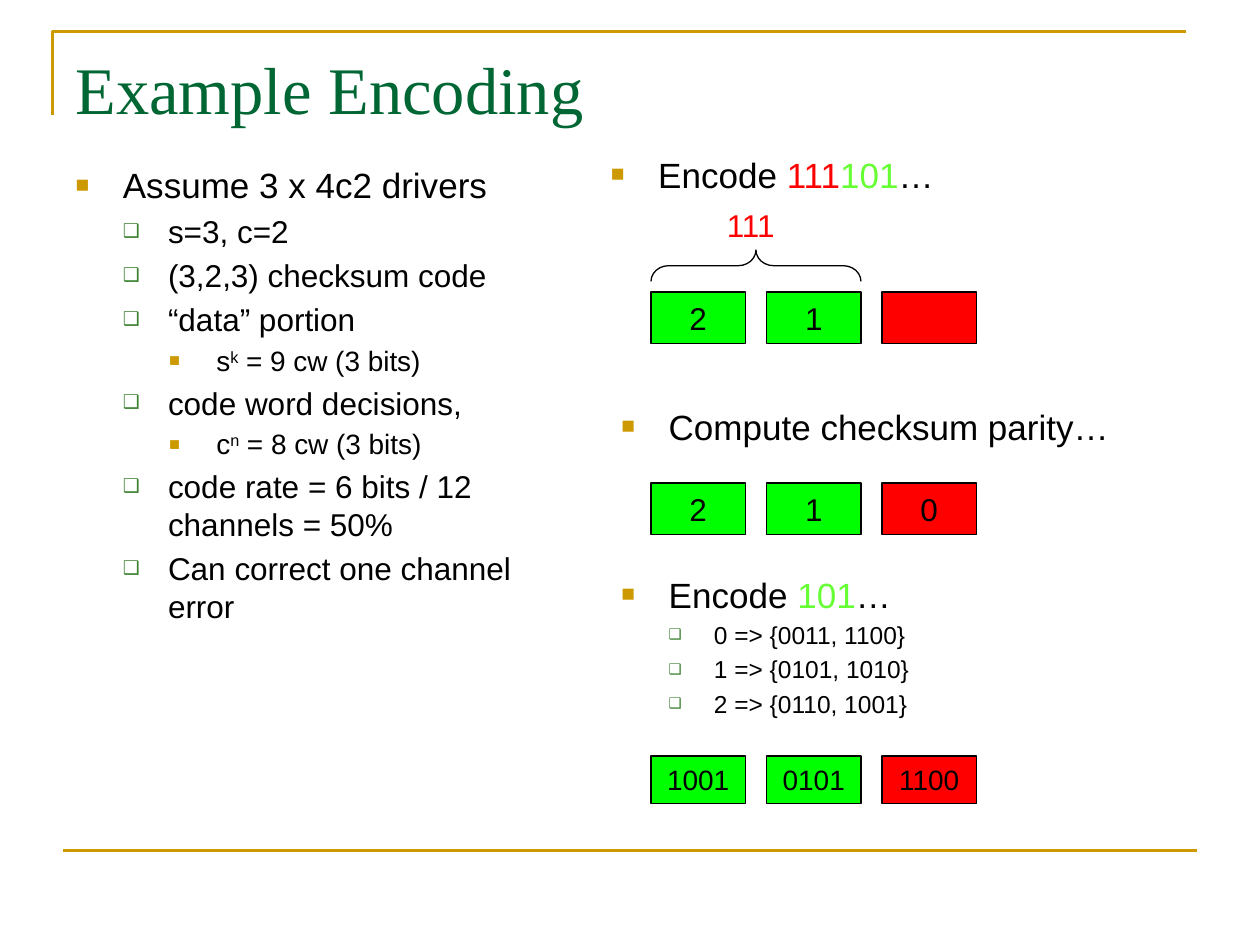
from lxml import etree
from pptx import Presentation
from pptx import util as u
from pptx.dml.color import RGBColor
from pptx.enum import shapes, text
from pptx.oxml import ns

PX = 7620  # 120 px to the inch
GOLD = RGBColor(0xCC, 0x99, 0x00)
DARK_GREEN = RGBColor(0x00, 0x66, 0x33)
BULLET_GREEN = RGBColor(0x3B, 0x81, 0x2F)
BLACK = RGBColor(0x00, 0x00, 0x00)
RED = RGBColor(0xFF, 0x00, 0x00)
GREEN = RGBColor(0x00, 0xFF, 0x00)
LIME = RGBColor(0x66, 0xFF, 0x33)

# Left margin, hanging indent (px), bullet, its colour and size for each level
SQUARE, BOX = "■", "❑"
LEVELS = [
    (45, 45, SQUARE, GOLD, 65),
    (88, 43, BOX, BULLET_GREEN, 60),
    (134, 45, SQUARE, GOLD, 65),
]
FRAME = {"word_wrap": True, "auto_size": text.MSO_AUTO_SIZE.NONE}


def write(paragraph, runs, size, font="Arial"):
    """Add (text, colour, baseline percent) runs to a paragraph."""
    for words, color, baseline in runs:
        run = paragraph.add_run()
        run.text = words
        for name, value in {"name": font, "size": u.Pt(size), "bold": False}.items():
            setattr(run.font, name, value)
        run.font.color.rgb = color
        if baseline:
            run._r.get_or_add_rPr().set("baseline", str(baseline * 1000))


def write_list(frame, items):
    """Fill a frame with bulleted (level, size, runs) items."""
    for name, value in FRAME.items():
        setattr(frame, name, value)
    frame.vertical_anchor = text.MSO_ANCHOR.TOP
    for index, (level, size, runs) in enumerate(items):
        paragraph = frame.add_paragraph() if index else frame.paragraphs[0]
        paragraph.level = level
        paragraph.space_before = u.Pt(size * 0.2)
        margin, hanging, bullet, color, percent = LEVELS[level]
        properties = paragraph._p.get_or_add_pPr()
        properties.set("marL", str(margin * PX))
        properties.set("indent", str(-hanging * PX))
        bullet_color = etree.SubElement(properties, ns.qn("a:buClr"))
        etree.SubElement(bullet_color, ns.qn("a:srgbClr"), val=str(color))
        etree.SubElement(properties, ns.qn("a:buSzPct"), val=str(percent * 1000))
        etree.SubElement(properties, ns.qn("a:buFont"), typeface="Arial")
        etree.SubElement(properties, ns.qn("a:buChar"), char=bullet)
        write(paragraph, runs, size)


presentation = Presentation()
presentation.slide_width = 1200 * PX
presentation.slide_height = 900 * PX
slide = presentation.slides.add_slide(presentation.slide_layouts[1])

# Frame lines
builder = slide.shapes.build_freeform(50, 110, scale=PX)
builder.add_line_segments([(50, 30), (1130, 30)], close=False)
corner = builder.convert_to_shape()
corner.shadow.inherit = False
corner.fill.background()
bottom_line = slide.shapes.add_connector(
    shapes.MSO_CONNECTOR.STRAIGHT, 60 * PX, 810 * PX, 1140 * PX, 810 * PX)
etree.SubElement(bottom_line._element.spPr, ns.qn("a:effectLst"))
for rule in (corner, bottom_line):
    rule.line.color.rgb = GOLD
    rule.line.width = u.Pt(1.5)

# Title and left-hand list
title = slide.shapes.title
body = slide.placeholders[1]
for placeholder, box in ((title, (60, 36, 1080, 84)), (body, (60, 150, 450, 520))):
    for name, value in zip(("left", "top", "width", "height"), box):
        setattr(placeholder, name, value * PX)
title_format = FRAME | {"vertical_anchor": text.MSO_ANCHOR.TOP, "margin_top": 10 * PX}
for name, value in title_format.items():
    setattr(title.text_frame, name, value)
title.text_frame.paragraphs[0].alignment = text.PP_ALIGN.LEFT
write(title.text_frame.paragraphs[0], [("Example Encoding", DARK_GREEN, 0)], 38,
      "Times New Roman")

write_list(body.text_frame, [
    (0, 20, [("Assume 3 x 4c2 drivers", BLACK, 0)]),
    (1, 18, [("s=3, c=2", BLACK, 0)]),
    (1, 18, [("(3,2,3) checksum code", BLACK, 0)]),
    (1, 18, [("“data” portion", BLACK, 0)]),
    (2, 16, [("s", BLACK, 0), ("k", BLACK, 30), (" = 9 cw (3 bits)", BLACK, 0)]),
    (1, 18, [("code word decisions,", BLACK, 0)]),
    (2, 16, [("c", BLACK, 0), ("n", BLACK, 30), (" = 8 cw (3 bits)", BLACK, 0)]),
    (1, 18, [("code rate = 6 bits / 12 channels = 50%", BLACK, 0)]),
    (1, 18, [("Can correct one channel error", BLACK, 0)]),
])

# Each step: list box, list items, then top, height, text size and words of its cells
encode_all = [(0, 20, [("Encode ", BLACK, 0), ("111", RED, 0), ("101", LIME, 0),
                       ("…", BLACK, 0)])]
compute = [(0, 20, [("Compute checksum parity…", BLACK, 0)])]
encode_rest = [(0, 20, [("Encode ", BLACK, 0), ("101", LIME, 0), ("…", BLACK, 0)])]
for mapping in ("0 => {0011, 1100}", "1 => {0101, 1010}", "2 => {0110, 1001}"):
    encode_rest.append((1, 14, [(mapping, BLACK, 0)]))
STEPS = [
    ((570, 140, 450, 60), encode_all, 278, 49, 18, ("2", "1", "")),
    ((580, 380, 550, 60), compute, 460, 49, 18, ("2", "1", "0")),
    ((580, 540, 450, 60), encode_rest, 720, 45, 16, ("1001", "0101", "1100")),
]
groups = []
for list_box, items, top, height, size, words in STEPS:
    group = slide.shapes.add_group_shape()
    groups.append(group)
    list_shape = group.shapes.add_textbox(*(value * PX for value in list_box))
    write_list(list_shape.text_frame, items)
    for column, (word, fill) in enumerate(zip(words, (GREEN, GREEN, RED))):
        cell = group.shapes.add_shape(
            shapes.MSO_SHAPE.RECTANGLE,
            (620 + 110 * column) * PX, top * PX, 90 * PX, height * PX)
        cell.shadow.inherit = False
        cell.fill.solid()
        cell.fill.fore_color.rgb = fill
        cell.line.color.rgb = BLACK
        cell.line.width = u.Pt(0.75)
        if word:
            cell.text_frame.vertical_anchor = text.MSO_ANCHOR.MIDDLE
            cell.text_frame.paragraphs[0].alignment = text.PP_ALIGN.CENTER
            write(cell.text_frame.paragraphs[0], [(word, BLACK, 0)], size)

# Brace that joins the first two cells to their bits
bits = groups[0].shapes.add_textbox(640 * PX, 190 * PX, 150 * PX, 48 * PX)
for name, value in FRAME.items():
    setattr(bits.text_frame, name, value)
bits.text_frame.paragraphs[0].alignment = text.PP_ALIGN.CENTER
write(bits.text_frame.paragraphs[0], [("111", RED, 0)], 18)

brace = groups[0].shapes.add_shape(
    shapes.MSO_SHAPE.RIGHT_BRACE, 705 * PX, 153 * PX, 30 * PX, 200 * PX)
brace.rotation = 270
brace.adjustments[0] = 0.56
brace.adjustments[1] = 0.5
brace.shadow.inherit = False
brace.fill.background()
brace.line.color.rgb = BLACK
brace.line.width = u.Pt(0.75)

presentation.save("out.pptx")
